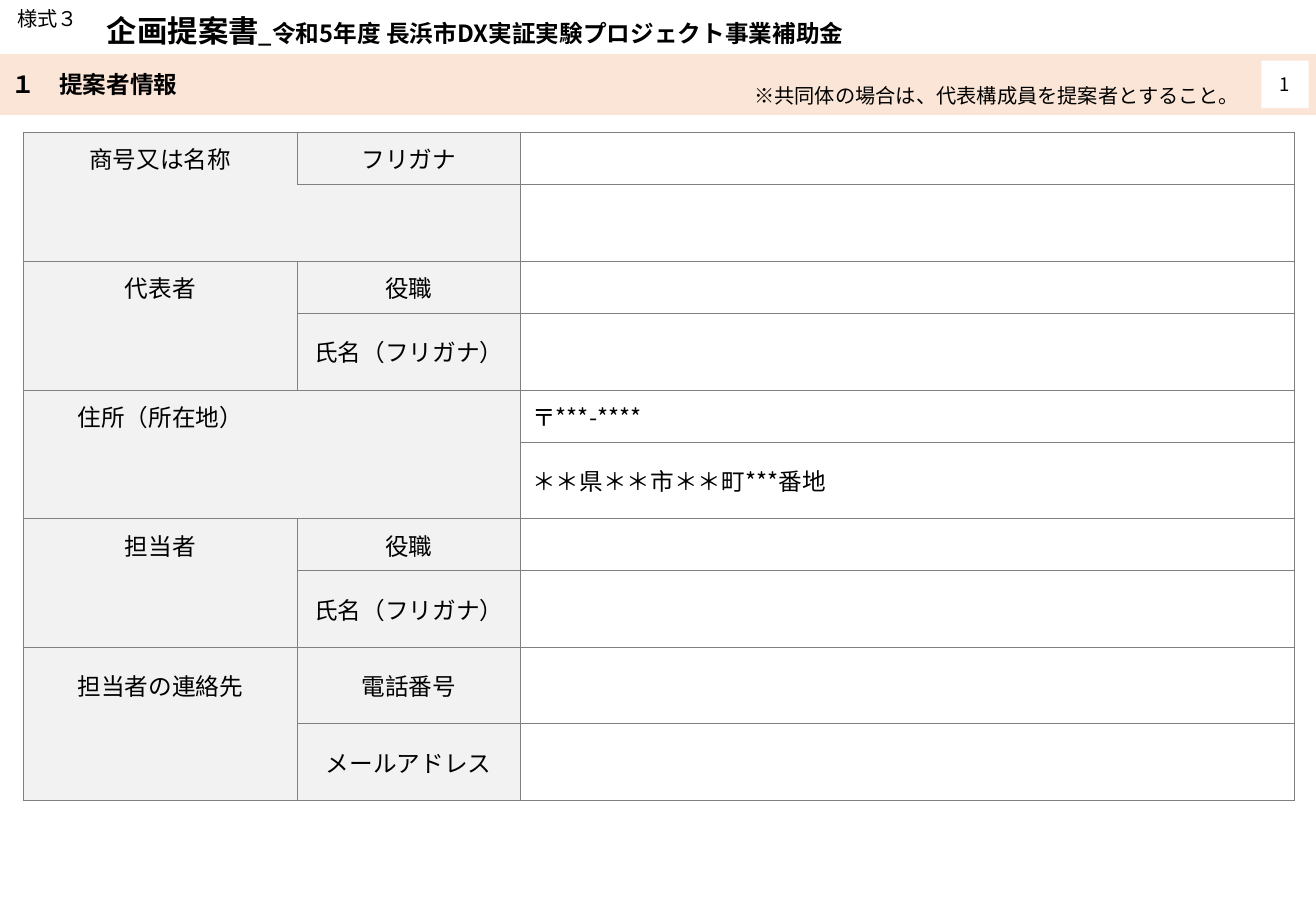
from dataclasses import dataclass

from lxml import etree
from pptx import Presentation
from pptx import util as u
from pptx.dml.color import RGBColor
from pptx.enum import shapes, text
from pptx.oxml.ns import qn

PX = 9144  # EMU per px, 100 px to the inch
FONT = "Noto Sans CJK JP"
HUES = {"ink": "000000", "band": "FBE5D6", "head": "F2F2F2",
        "rule": "808080", "white": "FFFFFF"}
LEFT, MID, RIGHT = text.PP_ALIGN.LEFT, text.PP_ALIGN.CENTER, text.PP_ALIGN.RIGHT
TOP, CORE = text.MSO_ANCHOR.TOP, text.MSO_ANCHOR.MIDDLE


@dataclass
class Run:
    words: str
    size: int
    bold: bool = False


@dataclass
class Box:
    left: int
    top: int
    width: int
    height: int
    runs: list[Run]
    align: text.PP_ALIGN = LEFT
    anchor: text.MSO_ANCHOR = CORE
    fill: str = ""
    line: str = ""


@dataclass
class Group:
    """Two table rows that share one name."""
    name: str
    labels: tuple[str, str]
    values: tuple[str, str] = ("", "")
    rows: tuple[int, int] = (43, 63)


TITLE = Box(78, 5, 986, 40, [
    Run("企画提案書", 18, True),
    Run("_令和5年度 長浜市DX実証実験プロジェクト事業補助金", 14, True)])
FORM = Box(0, 0, 78, 30, [Run("様式３", 12)], MID)
BAND = Box(0, 45, 1083, 49, [Run("１　提案者情報", 14, True)],
           fill="band", line="band")
NOTE = Box(592, 64, 438, 30,
           [Run("※共同体の場合は、代表構成員を提案者とすること。", 12)], RIGHT, TOP)
PAGE = Box(1038, 50, 39, 39, [Run("1", 11)], MID, fill="white")

COLS = (226, 183, 637)
PERSON = ("役職", "氏名（フリガナ）")
GROUPS = [
    Group("商号又は名称", ("フリガナ", "")),
    Group("代表者", PERSON),
    Group("住所（所在地）", ("", ""), ("〒***-****", "＊＊県＊＊市＊＊町***番地")),
    Group("担当者", PERSON),
    Group("担当者の連絡先", ("電話番号", "メールアドレス"), rows=(63, 63)),
]


def hue(name: str) -> RGBColor:
    return RGBColor.from_string(HUES[name])


def write(frame, runs: list[Run], align: text.PP_ALIGN) -> None:
    para = frame.paragraphs[0]
    para.alignment = align
    for part in runs:
        run = para.add_run()
        run.text = part.words
        font = run.font
        font.size, font.bold, font.name = u.Pt(part.size), part.bold, FONT
        font.color.rgb = hue("ink")
        east = etree.SubElement(run._r.get_or_add_rPr(), qn("a:ea"))
        east.set("typeface", FONT)


def place(shape, box: Box) -> None:
    shape.left, shape.top = box.left * PX, box.top * PX
    shape.width, shape.height = box.width * PX, box.height * PX
    frame = shape.text_frame
    frame.word_wrap = True
    frame.vertical_anchor = box.anchor
    if not box.fill:
        frame.auto_size = text.MSO_AUTO_SIZE.SHAPE_TO_FIT_TEXT
    write(frame, box.runs, box.align)


def label(slide, box: Box) -> None:
    place(slide.shapes.add_textbox(0, 0, 0, 0), box)


def block(slide, box: Box) -> None:
    shape = slide.shapes.add_shape(shapes.MSO_SHAPE.RECTANGLE, 0, 0, 0, 0)
    shape.shadow.inherit = False
    shape.fill.solid()
    shape.fill.fore_color.rgb = hue(box.fill)
    if box.line:
        shape.line.color.rgb = hue(box.line)
        shape.line.width = u.Pt(1)
    else:
        shape.line.fill.background()
    place(shape, box)


def edge(cell, gaps: str) -> None:
    """Rule all sides of a cell except those in gaps."""
    props = cell._tc.get_or_add_tcPr()
    for spot, side in enumerate("LRTB"):
        line = etree.Element(qn(f"a:ln{side}"), w=str(u.Pt(0.5)))
        if side in gaps:
            etree.SubElement(line, qn("a:noFill"))
        else:
            fill = etree.SubElement(line, qn("a:solidFill"))
            etree.SubElement(fill, qn("a:srgbClr"), val=HUES["rule"])
        props.insert(spot, line)


def fill_cell(cell, words: str, head: bool, gaps: str) -> None:
    cell.vertical_anchor = CORE
    if head:
        cell.fill.solid()
        cell.fill.fore_color.rgb = hue("head")
    else:
        cell.fill.background()
    if words:
        write(cell.text_frame, [Run(words, 14)], MID if head else LEFT)
    edge(cell, gaps)


def form(slide) -> None:
    highs = [high for group in GROUPS for high in group.rows]
    table = slide.shapes.add_table(
        len(highs), len(COLS), 19 * PX, 109 * PX,
        sum(COLS) * PX, sum(highs) * PX).table
    table.first_row = table.horz_banding = False
    for col, wide in zip(table.columns, COLS):
        col.width = wide * PX
    for row, high in zip(table.rows, highs):
        row.height = high * PX
    for num, group in enumerate(GROUPS):
        for half, inner in enumerate("BT"):
            row = 2 * num + half
            tag = group.labels[half]
            # A name cell runs on into its lower half and any blank label
            name_gap = inner + ("" if tag else "R")
            tag_gap = ("" if tag else "L") + ("" if any(group.labels) else inner)
            fill_cell(table.cell(row, 0), "" if half else group.name, True, name_gap)
            fill_cell(table.cell(row, 1), tag, True, tag_gap)
            fill_cell(table.cell(row, 2), group.values[half], False, "")


def main() -> None:
    deck = Presentation()
    deck.slide_width, deck.slide_height = 1083 * PX, 750 * PX
    slide = deck.slides.add_slide(deck.slide_layouts[5])
    # Heading
    label(slide, FORM)
    place(slide.shapes.title, TITLE)
    block(slide, BAND)
    label(slide, NOTE)
    # Entry form
    form(slide)
    # Page number
    block(slide, PAGE)
    deck.save("out.pptx")


if __name__ == "__main__":
    main()
